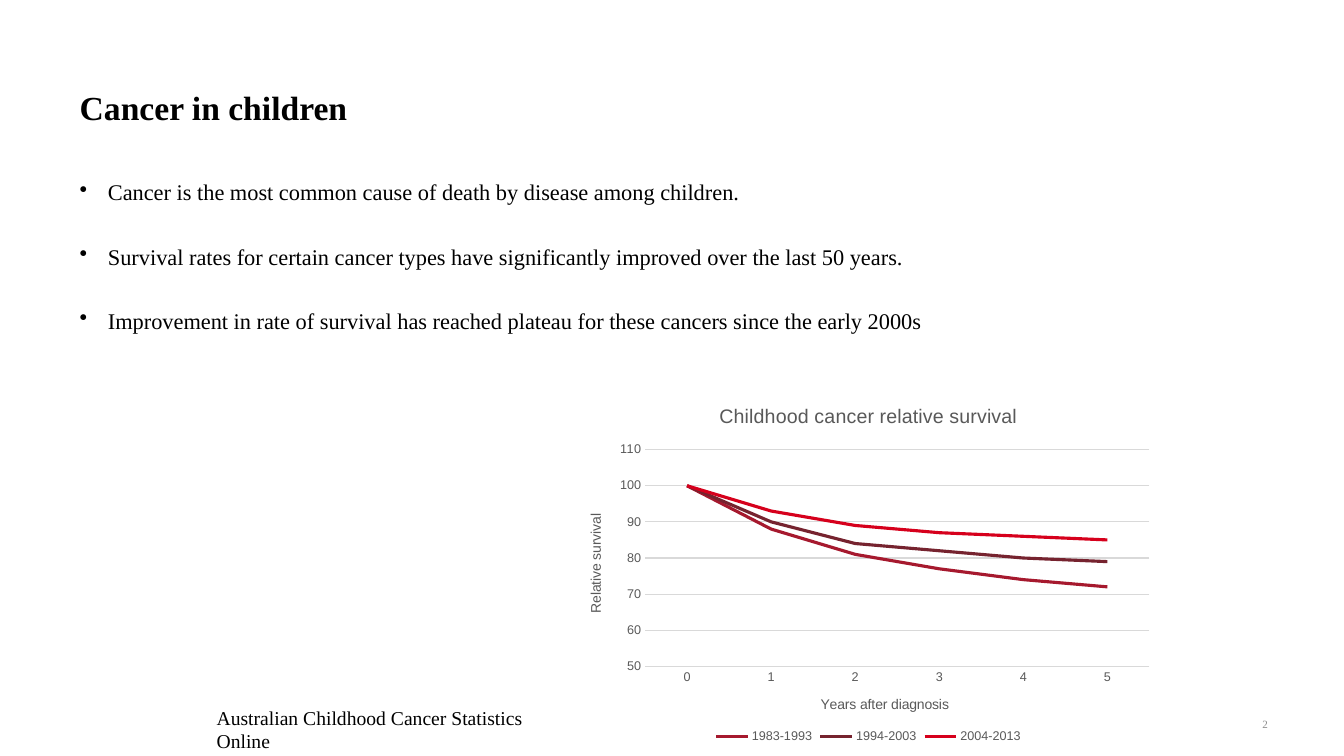
import pptx
import pptx.chart.data
import pptx.dml.color
import pptx.enum.chart
import pptx.enum.text
import pptx.oxml
import pptx.oxml.ns
import pptx.util
from pptx.util import Cm

RGBColor = pptx.dml.color.RGBColor
BLACK = RGBColor(0x00, 0x00, 0x00)
PAGE_GREY = RGBColor(0x8C, 0x8C, 0x8C)
LABEL_GREY = RGBColor(0x59, 0x59, 0x59)
GRID_GREY = RGBColor(0xD9, 0xD9, 0xD9)
CRIMSON = RGBColor(0xA6, 0x19, 0x2E)
MAROON = RGBColor(0x76, 0x23, 0x2F)
RED = RGBColor(0xD6, 0x00, 0x1C)
SERIF = "Times New Roman"
SANS = "Arial"

BULLETS = [
    "Cancer is the most common cause of death by disease among children.",
    "Survival rates for certain cancer types have significantly improved over the last 50 years.",
    "Improvement in rate of survival has reached plateau for these cancers since the early 2000s",
]
SURVIVAL = {
    "1983-1993": ([100, 88, 81, 77, 74, 72], CRIMSON),
    "1994-2003": ([100, 90, 84, 82, 80, 79], MAROON),
    "2004-2013": ([100, 93, 89, 87, 86, 85], RED),
}
PLOT_BOX = {"x": 0.125, "y": 0.174, "w": 0.847, "h": 0.601}


def set_attributes(target, values):
    for name, value in values.items():
        setattr(target, name, value)


def set_font(font, size, color, name=SERIF, bold=False):
    set_attributes(font, {"name": name, "size": pptx.util.Pt(size), "bold": bold})
    font.color.rgb = color


def add_text(page, box, lines, size, color=BLACK, bold=False, margins=(0, 0), frame_format=None):
    frame = page.shapes.add_textbox(*box).text_frame
    side, top = margins
    set_attributes(frame, {
        "word_wrap": True,
        "margin_left": side, "margin_right": side,
        "margin_top": top, "margin_bottom": top,
        **(frame_format or {}),
    })
    for index, line in enumerate(lines):
        para = frame.paragraphs[0] if index == 0 else frame.add_paragraph()
        span = para.add_run()
        span.text = line
        set_font(span.font, size, color, bold=bold)
    return frame


def add_bullets(page, box):
    frame = add_text(page, box, BULLETS, 16)
    for index, para in enumerate(frame.paragraphs):
        properties = para._p.get_or_add_pPr()
        properties.set("marL", str(Cm(0.71)))
        properties.set("indent", str(-Cm(0.71)))
        if index:
            para.space_before = pptx.util.Pt(26.6)
        bullet = pptx.oxml.parse_xml(f'<a:buChar {pptx.oxml.ns.nsdecls("a")} char="•"/>')
        properties.append(bullet)


def add_page_number(page, box):
    frame = add_text(page, box, ["2"], 7.9, PAGE_GREY,
                     frame_format={"vertical_anchor": pptx.enum.text.MSO_ANCHOR.MIDDLE})
    frame.paragraphs[0].alignment = pptx.enum.text.PP_ALIGN.RIGHT


def set_title(owner, text, size):
    frame = owner.text_frame
    frame.text = text
    set_font(frame.paragraphs[0].runs[0].font, size, LABEL_GREY, SANS)


def set_plot_box(chart):
    plot_area = chart._chartSpace.chart.plotArea
    for layout in plot_area.findall(pptx.oxml.ns.qn("c:layout")):
        plot_area.remove(layout)
    modes = '<c:xMode val="edge"/><c:yMode val="edge"/>'
    sizes = "".join(f'<c:{side} val="{value}"/>' for side, value in PLOT_BOX.items())
    plot_area.insert(0, pptx.oxml.parse_xml(
        f'<c:layout {pptx.oxml.ns.nsdecls("c")}><c:manualLayout>'
        f'<c:layoutTarget val="inner"/>{modes}{sizes}</c:manualLayout></c:layout>'))


def add_survival_chart(page, box):
    data = pptx.chart.data.CategoryChartData()
    data.categories = [str(year) for year in range(6)]
    for period, (rates, _) in SURVIVAL.items():
        data.add_series(period, rates)
    chart = page.shapes.add_chart(pptx.enum.chart.XL_CHART_TYPE.LINE, *box, data).chart
    set_font(chart.font, 10, BLACK, SANS)
    set_title(chart.chart_title, "Childhood cancer relative survival", 14)
    set_plot_box(chart)

    years, rates_axis = chart.category_axis, chart.value_axis
    for axis, text in ((years, "Years after diagnosis"), (rates_axis, "Relative survival")):
        set_title(axis.axis_title, text, 10)
        set_font(axis.tick_labels.font, 9, LABEL_GREY, SANS)
        axis.major_tick_mark = pptx.enum.chart.XL_TICK_MARK.NONE
    set_attributes(rates_axis, {"minimum_scale": 50, "maximum_scale": 110, "major_unit": 10})
    rates_axis.format.line.fill.background()
    for line in (years.format.line, rates_axis.major_gridlines.format.line):
        line.color.rgb = GRID_GREY
        line.width = pptx.util.Pt(0.75)

    chart.has_legend = True
    set_attributes(chart.legend, {
        "position": pptx.enum.chart.XL_LEGEND_POSITION.BOTTOM, "include_in_layout": False})
    set_font(chart.legend.font, 9, LABEL_GREY, SANS)

    plot = chart.plots[0]
    plot.vary_by_categories = False
    for series, (_, color) in zip(plot.series, SURVIVAL.values()):
        series.smooth = False
        series.format.line.color.rgb = color
        series.format.line.width = pptx.util.Pt(2.25)


def main():
    deck = pptx.Presentation()
    set_attributes(deck, {"slide_width": Cm(33.87), "slide_height": Cm(19.05)})
    page = deck.slides.add_slide(deck.slide_layouts[6])
    left = Cm(2.01)
    add_bullets(page, (left, Cm(4.5), Cm(29.95), Cm(12.57)))
    add_text(page, (left, Cm(2.18), Cm(17.63), Cm(1.35)), ["Cancer in children"], 24, bold=True)
    add_page_number(page, (Cm(24.28), Cm(17.73), Cm(7.67), Cm(1.02)))
    add_text(page, (Cm(5.21), Cm(17.65), Cm(9.42), Cm(0.86)),
             ["Australian Childhood Cancer Statistics Online"], 14, margins=(Cm(0.25), Cm(0.13)))
    add_survival_chart(page, (Cm(14.38), Cm(9.75), Cm(15.01), Cm(9.09)))
    deck.save("out.pptx")


if __name__ == "__main__":
    main()
